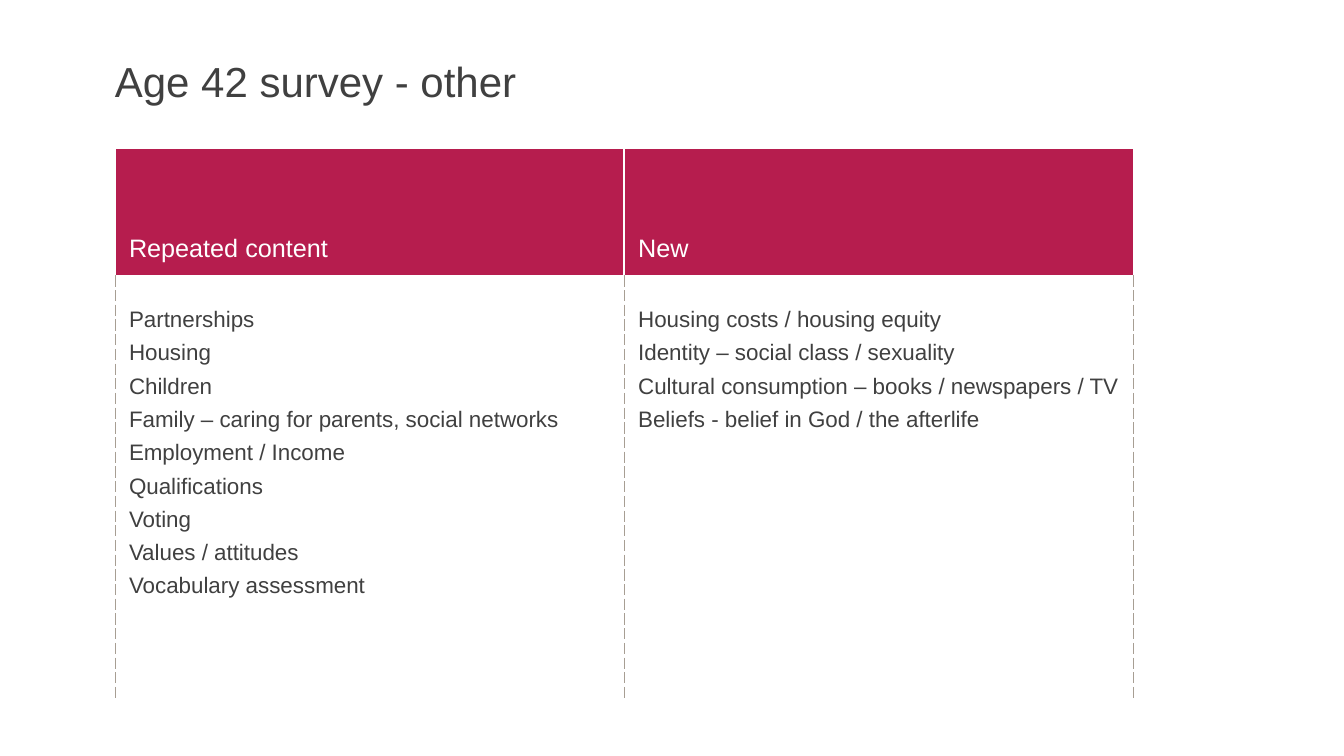
from lxml.etree import SubElement
from pptx import Presentation
from pptx.dml.color import RGBColor
from pptx.enum.text import MSO_ANCHOR, MSO_AUTO_SIZE, PP_ALIGN
from pptx.oxml.ns import qn
from pptx.util import Inches, Pt

WHITE = RGBColor(0xFF, 0xFF, 0xFF)
RED = RGBColor(0xB6, 0x1D, 0x4E)
GREY = RGBColor(0x40, 0x40, 0x40)
SAND = RGBColor(0xA7, 0x9E, 0x93)

SIDES = ("margin_left", "margin_top", "margin_right", "margin_bottom")
LEFT = 8.55
HEAD = {
    "size": 18, "color": WHITE, "fill": RED, "anchor": MSO_ANCHOR.BOTTOM,
    "inset": (0.14, 0.05, 0.14, 0.14), "after": 0,
    "edges": {"L": (WHITE, 1), "R": (WHITE, 1), "T": (WHITE, 1), "B": (WHITE, 3)},
}
BODY = {
    "size": 16, "color": GREY, "fill": None, "anchor": MSO_ANCHOR.TOP,
    "inset": (0.14, 0.3, 0.1, 0.05), "after": 6,
    "edges": {"L": (SAND, 0.25, "dash"), "R": (SAND, 0.25, "dash"),
              "T": (WHITE, 3), "B": (WHITE, 1)},
}
TOPICS = {
    "Repeated content": [
        "Partnerships", "Housing", "Children",
        "Family – caring for parents, social networks",
        "Employment / Income", "Qualifications", "Voting",
        "Values / attitudes", "Vocabulary assessment",
    ],
    "New": [
        "Housing costs / housing equity",
        "Identity – social class / sexuality",
        "Cultural consumption – books / newspapers / TV",
        "Beliefs - belief in God / the afterlife",
    ],
}


def apply(item, values):
    for name, value in values.items():
        setattr(item, name, value)


class Page:
    """Draws styled elements on one slide, placed in percent of its size."""

    def __init__(self, deck, font="Arial"):
        self.deck, self.font = deck, font
        self.slide = deck.slides.add_slide(deck.slide_layouts[5])

    def across(self, share):
        return round(self.deck.slide_width * share / 100)

    def down(self, share):
        return round(self.deck.slide_height * share / 100)

    def box(self, left, top, width, height):
        return self.across(left), self.down(top), self.across(width), self.down(height)

    def text(self, frame, lines, size, color, **form):
        frame.text = "\n".join(lines)
        for para in frame.paragraphs:
            apply(para, form)
            apply(para.font, {"name": self.font, "size": Pt(size), "bold": False})
            para.font.color.rgb = color

    def title(self, text, area):
        shape = self.slide.shapes.title
        apply(shape, dict(zip(("left", "top", "width", "height"), self.box(*area))))
        frame = shape.text_frame
        apply(frame, {"word_wrap": True, "auto_size": MSO_AUTO_SIZE.NONE,
                      "vertical_anchor": MSO_ANCHOR.MIDDLE, **dict.fromkeys(SIDES, 0)})
        self.text(frame, [text], 30, GREY, line_spacing=0.9, alignment=PP_ALIGN.LEFT)

    def edge(self, cell, side, color, width, dash="solid"):
        line = SubElement(cell._tc.get_or_add_tcPr(), qn(f"a:ln{side}"), w=str(Pt(width)))
        fill = SubElement(line, qn("a:solidFill"))
        SubElement(fill, qn("a:srgbClr"), val=str(color))
        SubElement(line, qn("a:prstDash"), val=dash)

    def cell(self, cell, lines, style):
        for side, stroke in style["edges"].items():
            self.edge(cell, side, *stroke)
        if style["fill"] is None:
            cell.fill.background()
        else:
            cell.fill.solid()
            cell.fill.fore_color.rgb = style["fill"]
        apply(cell, dict(zip(SIDES, map(Inches, style["inset"]))))
        cell.vertical_anchor = style["anchor"]
        self.text(cell.text_frame, lines, style["size"], style["color"],
                  space_after=Pt(style["after"]))

    def table(self, topics, left, top, width, rows):
        area = self.box(left, top, width, sum(rows))
        table = self.slide.shapes.add_table(len(rows), len(topics), *area).table
        apply(table, {"first_row": True, "horz_banding": False})
        for row, share in zip(table.rows, rows):
            row.height = self.down(share)
        for col, (name, lines) in enumerate(topics.items()):
            self.cell(table.cell(0, col), [name], HEAD)
            self.cell(table.cell(1, col), lines, BODY)


def main():
    deck = Presentation()
    apply(deck, {"slide_width": Inches(13.33), "slide_height": Inches(7.5)})
    page = Page(deck)
    page.title("Age 42 survey - other", (LEFT, 7.87, 69.77, 6.53))
    page.table(TOPICS, LEFT, 19.6, 75.77, (17.07, 55.73))
    deck.save("out.pptx")


if __name__ == "__main__":
    main()
